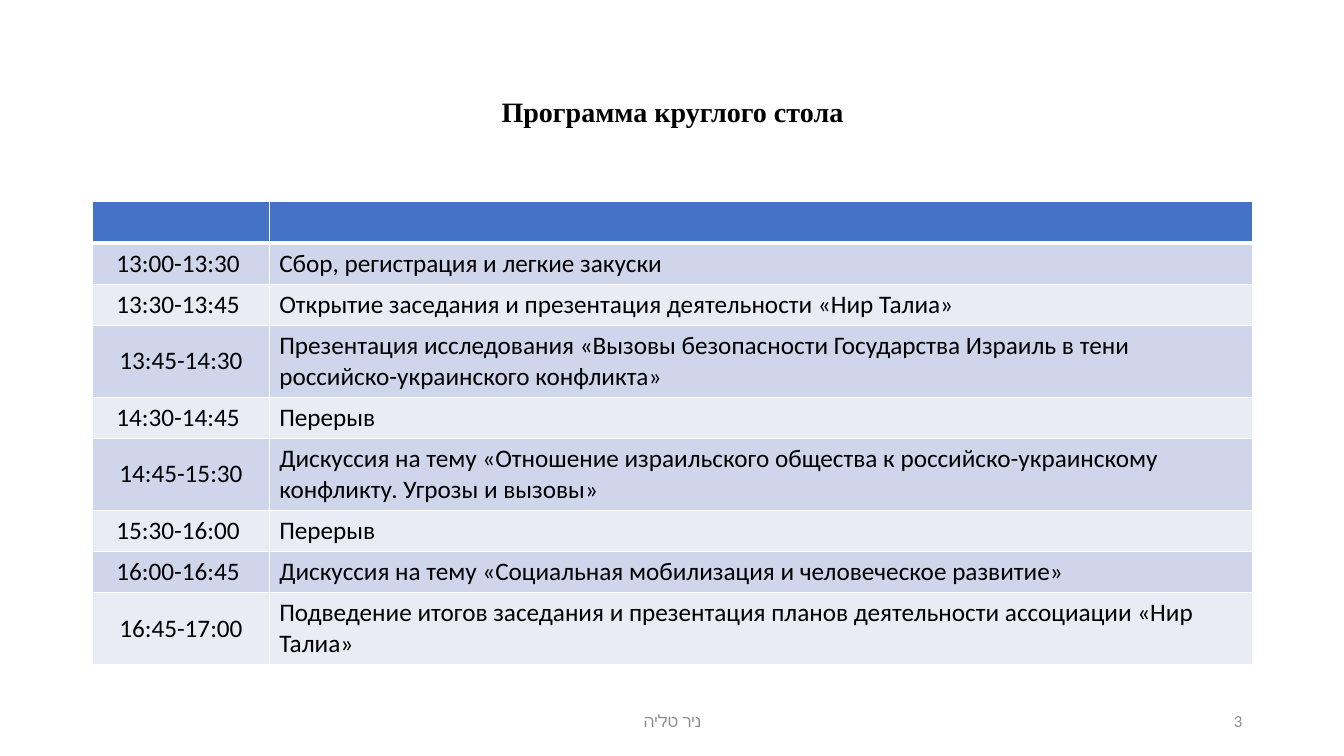
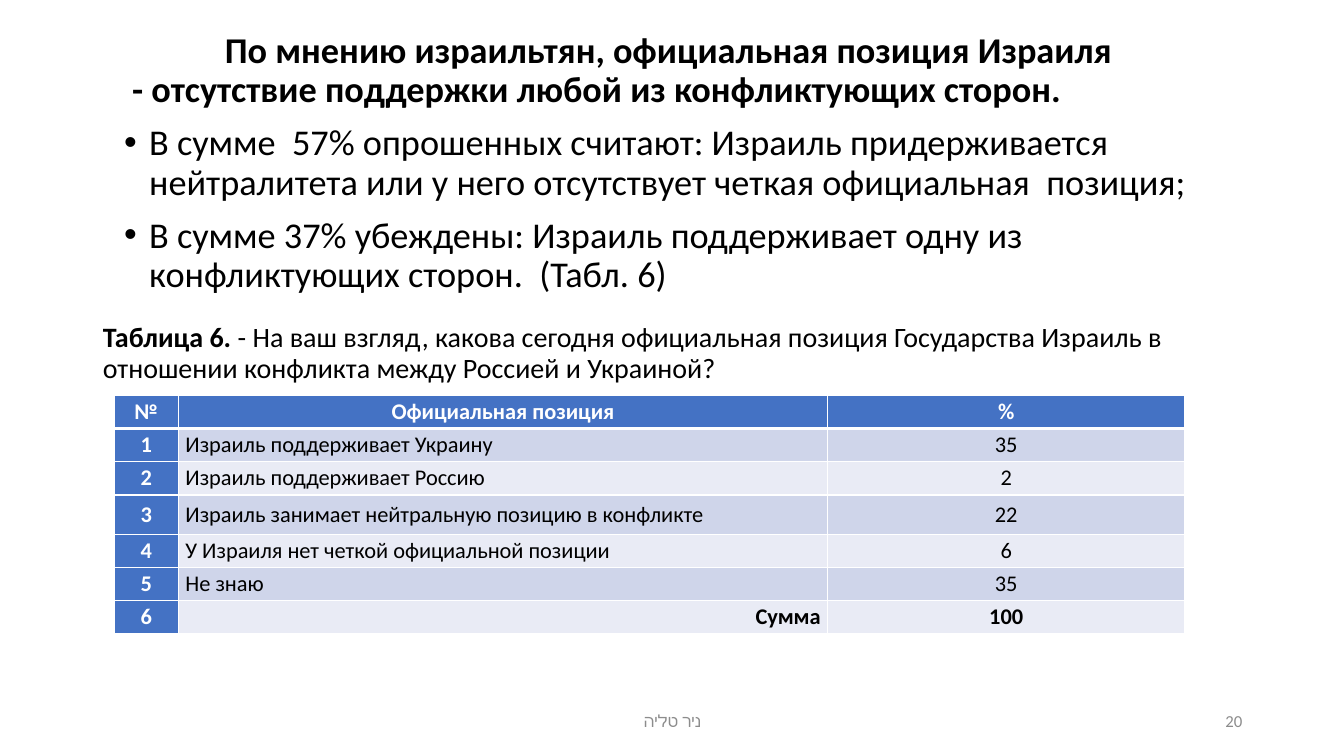
from dataclasses import dataclass

from lxml.etree import SubElement
from pptx import Presentation
from pptx.dml.color import RGBColor
from pptx.enum.text import MSO_ANCHOR, MSO_AUTO_SIZE, PP_ALIGN
from pptx.oxml.ns import qn
from pptx.util import Inches, Pt


@dataclass(frozen=True)
class Theme:
    font: str = "Calibri"
    title_font: str = "Times New Roman"
    black: RGBColor = RGBColor(0x00, 0x00, 0x00)
    white: RGBColor = RGBColor(0xFF, 0xFF, 0xFF)
    grey: RGBColor = RGBColor(0x8C, 0x8C, 0x8C)
    header: RGBColor = RGBColor(0x44, 0x72, 0xC4)
    bands: tuple = (RGBColor(0xCF, 0xD5, 0xEA), RGBColor(0xE9, 0xEB, 0xF5))
    title_size: float = 20
    body_size: float = 25.9
    agenda_size: float = 18
    poll_size: float = 16
    footer_size: float = 12


T = Theme()
LEFT, CENTER, RIGHT = PP_ALIGN.LEFT, PP_ALIGN.CENTER, PP_ALIGN.RIGHT


def add_run(p, text, size, color=T.black, bold=False, font=T.font):
    r = p.add_run()
    r.text = text
    r.font.name = font
    r.font.size = Pt(size)
    r.font.bold = bold
    r.font.color.rgb = color


def add_banded_table(s, rows, at, widths, heights, aligns, size,
                     head_col=False, margins=(0.1, 0.05)):
    """Add a table with a header row, banded rows and white borders."""
    sp = s.shapes.add_table(len(rows), len(widths), *map(Inches, at),
                            Inches(sum(widths)), Inches(sum(heights)))
    table = sp.table
    table.first_row = table.horz_banding = False
    for col, width in zip(table.columns, widths):
        col.width = Inches(width)
    for i, (row, height) in enumerate(zip(rows, heights)):
        table.rows[i].height = Inches(height)
        for j, text in enumerate(row):
            cell = table.cell(i, j)
            head = i == 0 or (head_col and j == 0)
            cell.margin_left = cell.margin_right = Inches(margins[0])
            cell.margin_top = cell.margin_bottom = Inches(margins[1])
            cell.vertical_anchor = MSO_ANCHOR.MIDDLE
            tcPr = cell._tc.get_or_add_tcPr()
            for side in ("lnL", "lnR", "lnT", "lnB"):
                thick = (i, side) in ((0, "lnB"), (1, "lnT"))
                ln = SubElement(tcPr, qn(f"a:{side}"), w=str(Pt(3 if thick else 1)))
                fill = SubElement(ln, qn("a:solidFill"))
                SubElement(fill, qn("a:srgbClr"), val=str(T.white))
            cell.fill.solid()
            cell.fill.fore_color.rgb = T.header if head else T.bands[(i - 1) % 2]
            p = cell.text_frame.paragraphs[0]
            p.alignment = CENTER if head else aligns[j]
            if text:
                add_run(p, text, size, T.white if head else T.black, head)
    return table


prs = Presentation()
prs.slide_width, prs.slide_height = Inches(13.33), Inches(7.5)

# Agenda
agenda = prs.slides.add_slide(prs.slide_layouts[5])
poll = prs.slides.add_slide(prs.slide_layouts[1])
for s, top, height, align in ((agenda, 0.4, 1.45, CENTER), (poll, 3, 1.02, LEFT)):
    sp = s.shapes.title
    sp.left, sp.top, sp.width, sp.height = map(Inches, (0.92, top, 11.5, height))
    tf = sp.text_frame
    tf.auto_size = MSO_AUTO_SIZE.NONE
    tf.vertical_anchor = MSO_ANCHOR.MIDDLE
    tf.paragraphs[0].alignment = align
    tf.paragraphs[0].line_spacing = 0.9

add_run(agenda.shapes.title.text_frame.paragraphs[0], "Программа круглого стола",
        T.title_size, bold=True, font=T.title_font)

agenda_rows = [
    ("", ""),
    ("13:00-13:30 ", "Сбор, регистрация и легкие закуски"),
    ("13:30-13:45 ", "Открытие заседания и презентация деятельности «Нир Талиа»"),
    ("13:45-14:30", "Презентация исследования «Вызовы безопасности Государства "
                    "Израиль в тени российско-украинского конфликта»"),
    ("14:30-14:45 ", "Перерыв"),
    ("14:45-15:30", "Дискуссия на тему «Отношение израильского общества к "
                    "российско-украинскому конфликту. Угрозы и вызовы»"),
    ("15:30-16:00 ", "Перерыв"),
    ("16:00-16:45 ", "Дискуссия на тему «Социальная мобилизация и человеческое развитие»"),
    ("16:45-17:00", "Подведение итогов заседания и презентация планов "
                    "деятельности ассоциации «Нир Талиа»"),
]
agenda_heights = [0.7 if len(text) > 70 else 0.41 for _, text in agenda_rows]
add_banded_table(agenda, agenda_rows, (0.92, 2), (1.75, 9.75), agenda_heights,
                 (CENTER, LEFT), T.agenda_size)

# Poll
p = poll.shapes.title.text_frame.paragraphs[0]
add_run(p, "Таблица 6. ", T.title_size, bold=True)
add_run(p, "- На ваш взгляд, какова сегодня официальная позиция Государства Израиль "
           "в отношении конфликта между Россией и Украиной?", T.title_size)

body = poll.placeholders[1]
body.left, body.top, body.width, body.height = map(Inches, (1.13, 0.27, 11.5, 2.93))
tf = body.text_frame
tf.auto_size = MSO_AUTO_SIZE.NONE
findings = [
    ("По мнению израильтян, официальная позиция Израиля ",
     " - отсутствие поддержки любой из конфликтующих сторон."),
    ("В сумме  57% опрошенных считают: Израиль придерживается нейтралитета "
     "или у него отсутствует четкая официальная  позиция;",),
    ("В сумме 37% убеждены: Израиль поддерживает одну из конфликтующих "
     "сторон.  (Табл. 6)",),
]
for i, lines in enumerate(findings):
    p = tf.add_paragraph() if i else tf.paragraphs[0]
    p.line_spacing = 0.9
    p.space_before = Pt(10)
    pPr = p._p.get_or_add_pPr()
    margin, indent = (0.25, -0.25) if i else (0, 1)
    pPr.set("marL", str(Inches(margin)))
    pPr.set("indent", str(Inches(indent)))
    if i:
        SubElement(pPr, qn("a:buFont"), typeface="Arial")
        SubElement(pPr, qn("a:buChar"), char="•")
    else:
        SubElement(pPr, qn("a:buNone"))
    for n, line in enumerate(lines):
        if n:
            p.add_line_break()
        add_run(p, line, T.body_size, bold=i == 0)

poll_rows = [
    ("№", "Официальная позиция", "%"),
    ("1", "Израиль поддерживает Украину", "35"),
    ("2", "Израиль поддерживает Россию", "2"),
    ("3", "Израиль занимает нейтральную позицию в конфликте", "22"),
    ("4", "У Израиля нет четкой официальной позиции", "6"),
    ("5", "Не знаю", "35"),
    ("6", "Сумма", "100"),
]
poll_heights = [0.39 if number == "3" else 0.33 for number, _, _ in poll_rows]
table = add_banded_table(poll, poll_rows, (1.13, 3.92), (0.64, 6.44, 3.54), poll_heights,
                         (CENTER, LEFT, CENTER), T.poll_size,
                         head_col=True, margins=(0.07, 0))
for j, align in ((1, RIGHT), (2, CENTER)):
    p = table.cell(len(poll_rows) - 1, j).text_frame.paragraphs[0]
    p.alignment = align
    p.runs[0].font.bold = True

# Footers
for s, number in ((agenda, "3"), (poll, "20")):
    for text, left, width, align in (("ניר טליה", 4.42, 4.5, CENTER),
                                     (number, 9.42, 3, RIGHT)):
        sp = s.shapes.add_textbox(*map(Inches, (left, 6.95, width, 0.4)))
        tf = sp.text_frame
        tf.word_wrap = True
        tf.vertical_anchor = MSO_ANCHOR.MIDDLE
        p = tf.paragraphs[0]
        p.alignment = align
        add_run(p, text, T.footer_size, T.grey)

prs.save("out.pptx")
